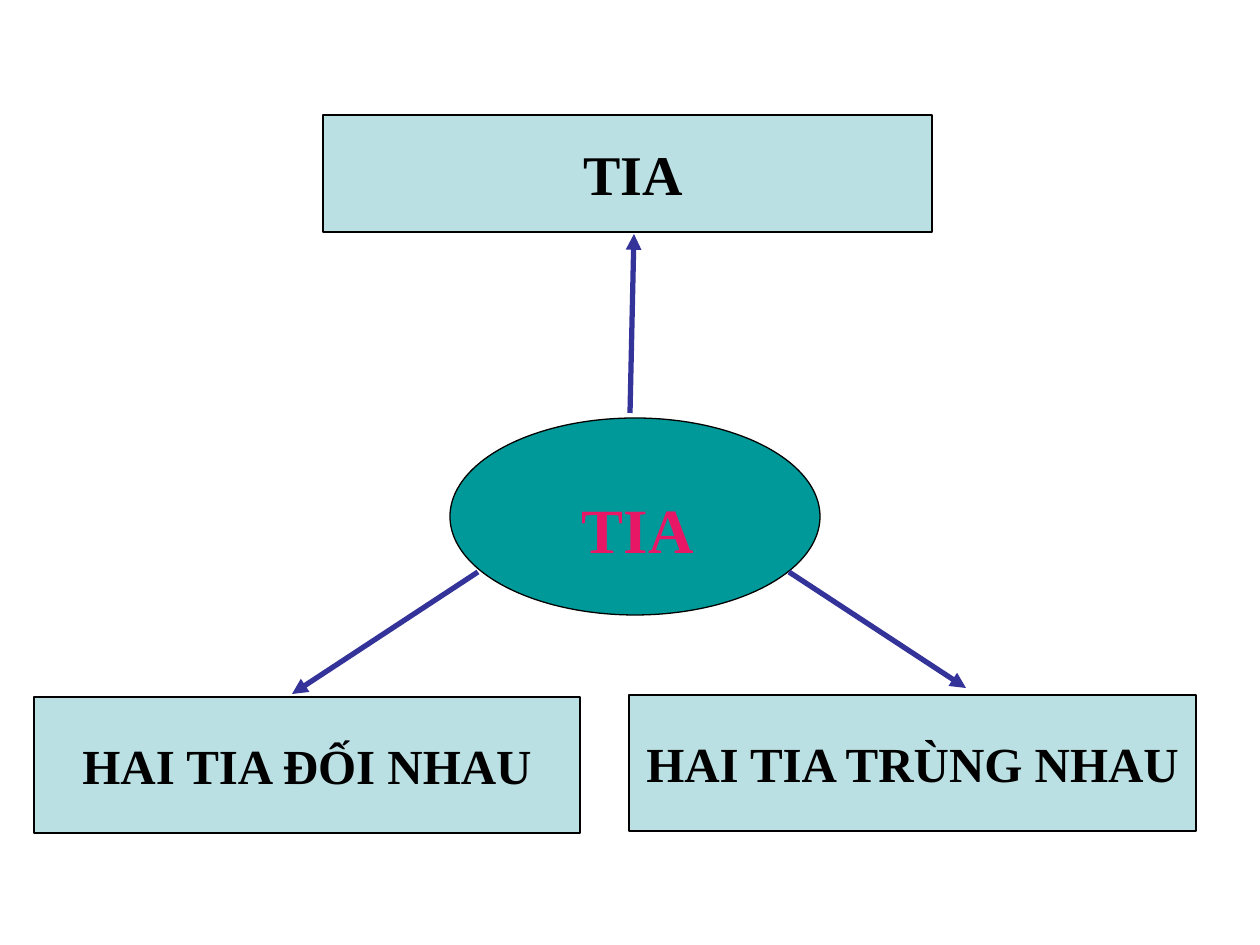
from dataclasses import dataclass

from lxml.etree import SubElement
from pptx import Presentation
from pptx.dml.color import RGBColor
from pptx.enum.shapes import MSO_CONNECTOR, MSO_SHAPE
from pptx.enum.text import MSO_ANCHOR, PP_ALIGN
from pptx.oxml.ns import qn
from pptx.shapes.base import BaseShape
from pptx.slide import Slide
from pptx.util import Emu, Pt

PIXELS_PER_INCH = 126
FONT = "Times New Roman"
BLACK, PALE_BLUE, TEAL = "000000", "BBE0E3", "009999"
ARROW_BLUE, PINK = "333399", "E81766"


@dataclass(frozen=True)
class Box:
    left: int
    top: int
    width: int
    height: int


@dataclass(frozen=True)
class Topic:
    text: str
    box: Box
    size: int = 28
    indent: int = 0


@dataclass(frozen=True)
class Arrow:
    start: tuple[int, int]
    end: tuple[int, int]


HUB = Box(450, 418, 370, 197)
HUB_LABEL = Box(528, 478, 219, 62)
TOPICS = [
    Topic("TIA", Box(323, 115, 609, 117), size=32, indent=12),
    Topic("HAI TIA TRÙNG NHAU", Box(629, 695, 567, 136)),
    Topic("HAI TIA ĐỐI NHAU", Box(34, 697, 546, 136)),
]
ARROWS = [
    Arrow((789, 572), (966, 688)),
    Arrow((478, 572), (292, 694)),
    Arrow((630, 413), (634, 234)),
]


def px(length: int) -> Emu:
    return Emu(round(length * 914400 / PIXELS_PER_INCH))


def color(value: str) -> RGBColor:
    return RGBColor.from_string(value)


def place(box: Box) -> tuple[Emu, Emu, Emu, Emu]:
    return px(box.left), px(box.top), px(box.width), px(box.height)


def write_text(shape: BaseShape, text: str, *, size: int, text_color: str = BLACK,
               anchor: MSO_ANCHOR = MSO_ANCHOR.MIDDLE,
               left_inset: int = 0, top_inset: int = 0) -> None:
    frame = shape.text_frame
    frame.word_wrap = True
    frame.vertical_anchor = anchor
    frame.margin_left, frame.margin_top = px(left_inset), px(top_inset)
    frame.margin_right = frame.margin_bottom = 0
    paragraph = frame.paragraphs[0]
    paragraph.alignment = PP_ALIGN.CENTER
    run = paragraph.add_run()
    run.text = text
    run.font.name, run.font.size, run.font.bold = FONT, Pt(size), True
    run.font.color.rgb = color(text_color)


def add_outlined(slide: Slide, kind: MSO_SHAPE, box: Box, fill: str) -> BaseShape:
    shape = slide.shapes.add_shape(kind, *place(box))
    shape.shadow.inherit = False
    shape.fill.solid()
    shape.fill.fore_color.rgb = color(fill)
    shape.line.color.rgb = color(BLACK)
    shape.line.width = Pt(0.75)
    return shape


def add_topic(slide: Slide, topic: Topic) -> None:
    shape = add_outlined(slide, MSO_SHAPE.RECTANGLE, topic.box, PALE_BLUE)
    write_text(shape, topic.text, size=topic.size, left_inset=topic.indent)


def add_arrow(slide: Slide, arrow: Arrow) -> None:
    points = [px(value) for value in (*arrow.start, *arrow.end)]
    connector = slide.shapes.add_connector(MSO_CONNECTOR.STRAIGHT, *points)
    connector.line.color.rgb = color(ARROW_BLUE)
    connector.line.width = Pt(3)
    SubElement(connector.line._get_or_add_ln(), qn("a:tailEnd"), type="triangle")
    SubElement(connector._element.spPr, qn("a:effectLst"))


def main() -> None:
    presentation = Presentation()
    presentation.slide_width, presentation.slide_height = px(1260), px(945)
    slide = presentation.slides.add_slide(presentation.slide_layouts[6])

    # Central idea
    add_outlined(slide, MSO_SHAPE.OVAL, HUB, TEAL)
    label = slide.shapes.add_textbox(*place(HUB_LABEL))
    write_text(label, "TIA", size=36, text_color=PINK,
               anchor=MSO_ANCHOR.TOP, top_inset=13)

    # Branches and their topics
    for arrow in ARROWS:
        add_arrow(slide, arrow)
    for topic in TOPICS:
        add_topic(slide, topic)

    presentation.save("out.pptx")


if __name__ == "__main__":
    main()
